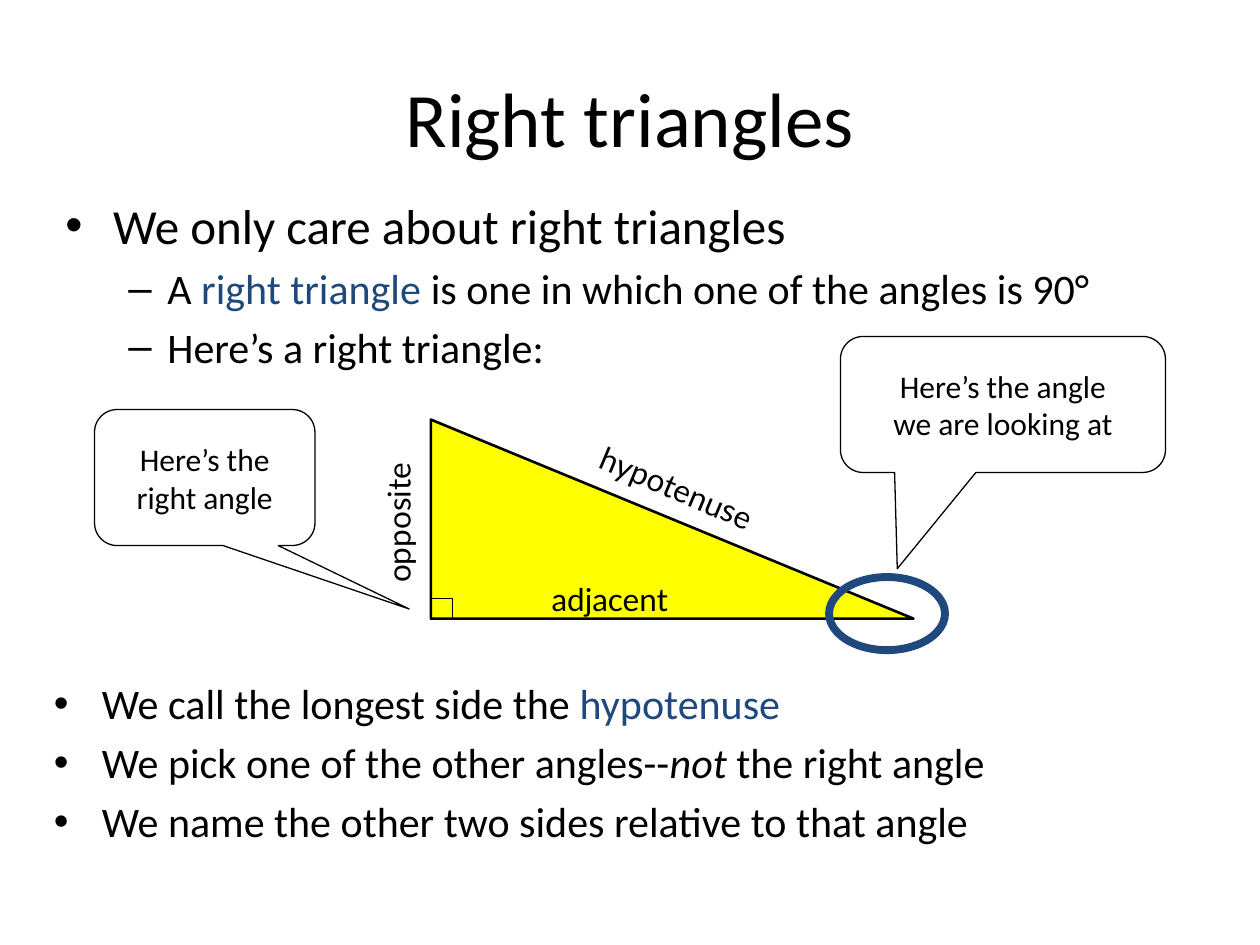
"""Builds the slide on right triangles and the names of their sides."""
from lxml import etree
from pptx import Presentation
from pptx import util as u
from pptx.dml.color import RGBColor
from pptx.enum import shapes, text
from pptx.oxml import ns

BLACK, NAVY, YELLOW = "000000", "1F497D", "FFFF00"
Shape = shapes.MSO_SHAPE


def rgb(value):
    return RGBColor.from_string(value)


def style(frame, size, font="Calibri", align=text.PP_ALIGN.CENTER, wrap=True):
    frame.word_wrap = wrap
    for paragraph in frame.paragraphs:
        paragraph.alignment = align
        for run in paragraph.runs:
            run.font.size = u.Pt(size)
            run.font.name = font
            run.font.color.rgb = rgb(BLACK)


deck = Presentation()
deck.slide_width, deck.slide_height = u.Inches(10), u.Inches(7.5)
slide = deck.slides.add_slide(deck.slide_layouts[6])

title = slide.shapes.add_textbox(*map(u.Inches, (0.5, 0.3, 9, 1.25)))
title.text_frame.text = "Right triangles"
title.text_frame.vertical_anchor = text.MSO_ANCHOR.MIDDLE
style(title.text_frame, 44)

# Each line: bullet, size, left margin, hanging indent, runs
lists = [
    ((0.42, 1.5, 9.08, 1.67), [
        ("•", 28, 0.38, 0.38, ["We only care about right triangles"]),
        ("–", 24, 0.81, 0.31, ["A ", "right triangle", " is one in which one of the angles is 90°"]),
        ("–", 24, 0.81, 0.31, ["Here’s a right triangle:"]),
    ]),
    ((0.33, 5.33, 9.38, 1.79), [
        ("•", 24, 0.38, 0.38, ["We call the longest side the ", "hypotenuse"]),
        ("•", 24, 0.38, 0.38, ["We pick one of the other angles--", "not", " the right angle"]),
        ("•", 24, 0.38, 0.38, ["We name the other two sides relative to that angle"]),
    ]),
]
for box, lines in lists:
    frame = slide.shapes.add_textbox(*map(u.Inches, box)).text_frame
    frame.word_wrap = True
    for number, (bullet, size, margin, hanging, pieces) in enumerate(lines):
        line = frame.add_paragraph() if number else frame.paragraphs[0]
        for piece in pieces:
            run = line.add_run()
            run.text = piece
            run.font.size, run.font.name = u.Pt(size), "Calibri"
            run.font.color.rgb = rgb(NAVY if piece in ("right triangle", "hypotenuse") else BLACK)
            run.font.italic = piece == "not"
        props = line._p.get_or_add_pPr()
        props.set("marL", str(u.Inches(margin)))
        props.set("indent", str(-u.Inches(hanging)))
        before = etree.SubElement(props, ns.qn("a:spcBef"))
        etree.SubElement(before, ns.qn("a:spcPct"), val="20000")
        etree.SubElement(props, ns.qn("a:buFont"), typeface="Arial")
        etree.SubElement(props, ns.qn("a:buChar"), char=bullet)

figures = [
    (Shape.ROUNDED_RECTANGULAR_CALLOUT, (0.75, 3.25, 1.75, 1.08), None, BLACK, 0.75,
     (0.927, 0.966, 0.167), "Here’s the\nright angle"),
    (Shape.RIGHT_TRIANGLE, (3.42, 3.33, 3.83, 1.58), YELLOW, BLACK, 1.5, (), ""),
    (Shape.RECTANGLE, (3.42, 4.75, 0.17, 0.17), None, BLACK, 0.75, (), ""),
    (Shape.OVAL, (6.58, 4.58, 0.92, 0.58), None, NAVY, 4.5, (), ""),
    (Shape.ROUNDED_RECTANGULAR_CALLOUT, (6.67, 2.67, 2.58, 1.08), None, BLACK, 0.75,
     (-0.325, 1.207, 0.167), "Here’s the angle\nwe are looking at"),
]
for kind, box, fill, outline, width, adjustments, words in figures:
    figure = slide.shapes.add_shape(kind, *map(u.Inches, box))
    figure.shadow.inherit = False
    if fill:
        figure.fill.solid()
        figure.fill.fore_color.rgb = rgb(fill)
    else:
        figure.fill.background()
    figure.line.color.rgb = rgb(outline)
    figure.line.width = u.Pt(width)
    for index, value in enumerate(adjustments):
        figure.adjustments[index] = value
    if words:
        figure.text_frame.text = words
        figure.text_frame.vertical_anchor = text.MSO_ANCHOR.MIDDLE
        style(figure.text_frame, 18, wrap=False)

sides = [
    ("hypotenuse", (4.38, 3.67, 1.98, 0.4), 22.9, True),
    ("adjacent", (4.24, 4.55, 1.2, 0.4), 0, False),
    ("opposite", (2.58, 3.95, 1.16, 0.4), 270, False),
]
for name, box, rotation, wrap in sides:
    side = slide.shapes.add_textbox(*map(u.Inches, box))
    side.rotation = rotation
    side.text_frame.text = name
    side.text_frame.vertical_anchor = text.MSO_ANCHOR.MIDDLE
    side.text_frame.auto_size = text.MSO_AUTO_SIZE.SHAPE_TO_FIT_TEXT
    style(side.text_frame, 18, "Lato", wrap=wrap)

deck.save("out.pptx")
